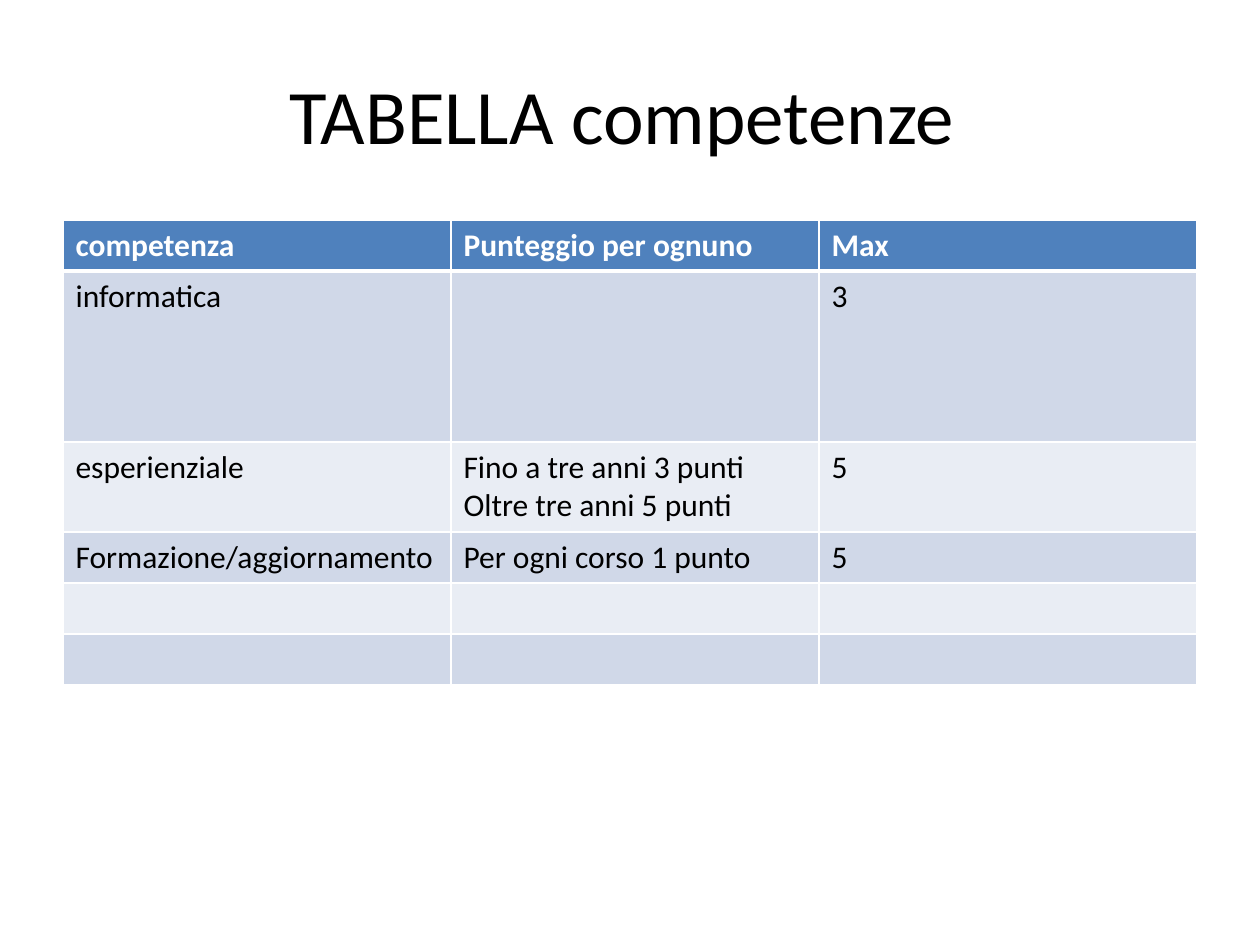
"""Build a slide with a title and a table of skills and points."""
from lxml.etree import SubElement
from pptx import Presentation
from pptx.dml.color import RGBColor
from pptx.enum.text import MSO_ANCHOR, PP_ALIGN
from pptx.oxml.ns import qn
from pptx.util import Emu, Pt

SCALE = 914400 / 126
FONT = "Calibri"
BLACK = RGBColor(0x00, 0x00, 0x00)
WHITE = RGBColor(0xFF, 0xFF, 0xFF)
BLUE = RGBColor(0x4F, 0x81, 0xBD)
BANDS = (RGBColor(0xE9, 0xED, 0xF4), RGBColor(0xD0, 0xD8, 0xE8))

COLS = (388, 368, 378)
ROWS = (
    (51, ("competenza", "Punteggio per ognuno", "Max")),
    (171, ("informatica", "", "3")),
    (90, ("esperienziale", "Fino a tre anni 3 punti\nOltre tre anni 5 punti", "5")),
    (51, ("Formazione/aggiornamento", "Per ogni corso 1 punto", "5")),
    (51, ("", "", "")),
    (51, ("", "", "")),
)


def px(size):
    return Emu(round(size * SCALE))


def style(font, size, color, bold=False):
    font.name = FONT
    font.size = Pt(size)
    font.bold = bold
    font.color.rgb = color


def write(frame, text, size, color, bold=False, align=PP_ALIGN.LEFT):
    for num, line in enumerate(text.split("\n")):
        para = frame.add_paragraph() if num else frame.paragraphs[0]
        para.alignment = align
        if line:
            run = para.add_run()
            run.text = line
            style(run.font, size, color, bold)
        else:
            style(para.font, size, color, bold)


def add_title(slide, text):
    frame = slide.shapes.add_textbox(px(64), px(35), px(1134), px(158)).text_frame
    frame.word_wrap = True
    frame.vertical_anchor = MSO_ANCHOR.MIDDLE
    write(frame, text, 44, BLACK, align=PP_ALIGN.CENTER)


def set_edges(cell, top, base):
    props = cell._tc.get_or_add_tcPr()
    widths = {"a:lnL": 1, "a:lnR": 1, "a:lnT": top, "a:lnB": base}
    for place, (tag, width) in enumerate(widths.items()):
        line = SubElement(props, qn(tag), w=str(Pt(width)))
        fill = SubElement(line, qn("a:solidFill"))
        SubElement(fill, qn("a:srgbClr"), val=str(WHITE))
        props.insert(place, line)


def fill_cell(cell, text, row):
    head = row == 0
    cell.fill.solid()
    cell.fill.fore_color.rgb = BLUE if head else BANDS[row % 2]
    set_edges(cell, 3 if row == 1 else 1, 3 if head else 1)
    write(cell.text_frame, text, 18, WHITE if head else BLACK, head)


def add_grid(slide):
    high = sum(size for size, _ in ROWS)
    grid = slide.shapes.add_table(
        len(ROWS), len(COLS), px(63), px(220), px(sum(COLS)), px(high)
    ).table
    for col, width in zip(grid.columns, COLS):
        col.width = px(width)
    for row, (size, texts) in enumerate(ROWS):
        grid.rows[row].height = px(size)
        for col, text in enumerate(texts):
            fill_cell(grid.cell(row, col), text, row)


def main():
    deck = Presentation()
    deck.slide_width, deck.slide_height = px(1260), px(945)
    slide = deck.slides.add_slide(deck.slide_layouts[6])
    add_title(slide, "TABELLA competenze ")
    add_grid(slide)
    deck.save("out.pptx")


if __name__ == "__main__":
    main()
